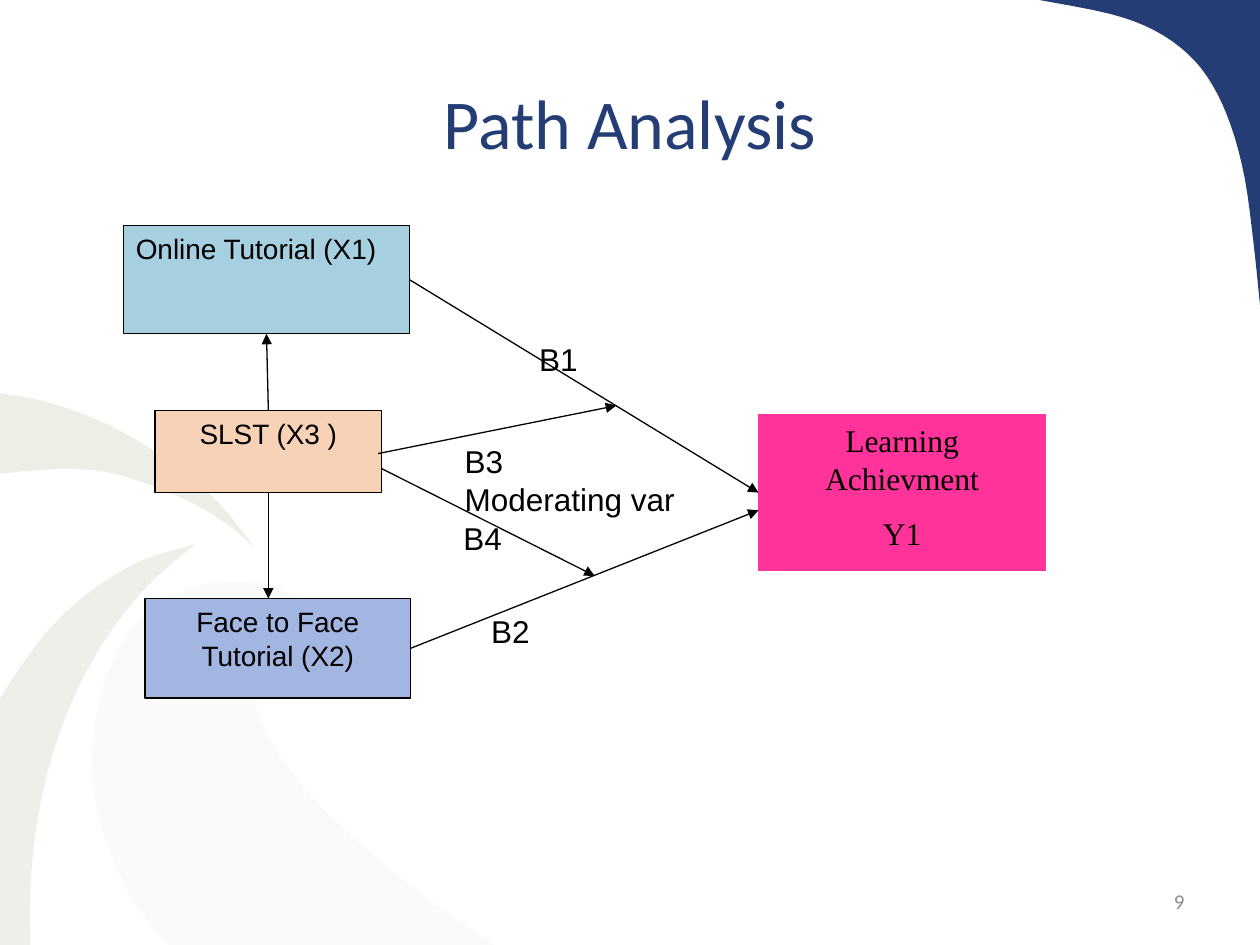
from dataclasses import dataclass
from typing import Optional

from lxml import etree
from pptx import Presentation
from pptx.dml.color import RGBColor
from pptx.enum.shapes import MSO_CONNECTOR, MSO_SHAPE
from pptx.enum.text import MSO_ANCHOR, PP_ALIGN
from pptx.oxml.ns import qn
from pptx.util import Inches, Pt

LEFT, CENTER, RIGHT = PP_ALIGN.LEFT, PP_ALIGN.CENTER, PP_ALIGN.RIGHT
TOP, MIDDLE = MSO_ANCHOR.TOP, MSO_ANCHOR.MIDDLE
RECTANGLE, PROCESS = MSO_SHAPE.RECTANGLE, MSO_SHAPE.FLOWCHART_PROCESS
STRAIGHT = MSO_CONNECTOR.STRAIGHT
SIDE_TOP, SIDE_LEFT, SIDE_BOTTOM, SIDE_RIGHT = range(4)
CURVE_STEPS = 4

COLORS = {
    "navy": "253D75", "pale_green": "EBEFE6", "green": "D7DFCE", "gray": "F2F2F2",
    "number": "8C8C8C", "black": "000000", "blue": "A6D0DF", "peach": "F8D2B6",
    "periwinkle": "A3B6E2", "pink": "FF3399",
}

Point = tuple[float, float]


@dataclass
class Swoosh:
    color: str
    edges: list[list[Point]]  # each edge is a smooth curve; edges meet at corners
    opacity: int = 100


@dataclass
class Box:
    name: str
    frame: tuple[float, float, float, float]
    fill: str
    line: str
    lines: list[str]
    size: int = 16
    font: str = "Arial"
    align: PP_ALIGN = CENTER
    space_after: int = 10
    preset: MSO_SHAPE = RECTANGLE


@dataclass
class Arrow:
    start: Point
    end: Point
    source: Optional[tuple[str, int]] = None
    target: Optional[tuple[str, int]] = None


@dataclass
class Label:
    frame: tuple[float, float, float, float]
    lines: list[str]
    size: int = 18
    font: str = "Arial"
    color: str = "black"
    align: PP_ALIGN = LEFT
    anchor: MSO_ANCHOR = TOP
    wrap: bool = False
    margin_top: float = 0.05


SWOOSHES = [
    Swoosh("navy", [
        [(8.25, 0), (10, 0)], [(10, 0), (10, 2.42)],
        [(10, 2.42), (9.95, 1.94), (9.88, 1.42), (9.77, 1), (9.62, 0.67), (9.43, 0.43),
         (9.16, 0.24), (8.81, 0.11), (8.25, 0)]]),
    Swoosh("pale_green", [
        [(0, 3.12), (0.37, 3.19), (0.79, 3.34), (1.16, 3.54), (1.48, 3.76), (1.78, 4.04),
         (2.02, 4.35)],
        [(2.02, 4.35), (1.83, 4.18), (1.54, 4), (1.22, 3.86), (0.86, 3.75), (0.49, 3.72),
         (0, 3.76)]]),
    Swoosh("green", [
        [(0, 5.54), (0.22, 5.21), (0.46, 4.92), (0.75, 4.67), (1.12, 4.45), (1.55, 4.32)],
        [(1.55, 4.32), (1.2, 4.62), (0.9, 4.98), (0.67, 5.36), (0.49, 5.77), (0.36, 6.2),
         (0.28, 6.63), (0.24, 7.07), (0.24, 7.5)],
        [(0.24, 7.5), (0, 7.5)]], 44),
    Swoosh("gray", [
        [(2.45, 4.79), (2.15, 4.65), (1.83, 4.61), (1.51, 4.67), (1.22, 4.83), (0.98, 5.09),
         (0.81, 5.47), (0.73, 5.97), (0.77, 6.43), (0.92, 6.88), (1.12, 7.24), (1.34, 7.5)],
        [(1.34, 7.5), (3.92, 7.5)],
        [(3.92, 7.5), (3.47, 7.19), (3.04, 6.85), (2.59, 6.45), (2.31, 6.12), (2.12, 5.83),
         (2.02, 5.55), (2.01, 5.29), (2.09, 5.09), (2.21, 4.96), (2.45, 4.79)]], 34),
]

BOXES = [
    Box("online", (0.98, 1.79, 2.27, 0.86), "blue", "black", ["Online Tutorial (X1)"],
        align=LEFT, space_after=8, preset=PROCESS),
    Box("slst", (1.23, 3.26, 1.8, 0.65), "peach", "black", ["SLST (X3 )"]),
    Box("face", (1.15, 4.75, 2.11, 0.79), "periwinkle", "black",
        ["Face to Face Tutorial (X2)"], space_after=8),
    Box("achievement", (6.02, 3.29, 2.28, 1.24), "pink", "pink",
        ["Learning Achievment", "Y1"], 18, "Times New Roman"),
]

ARROWS = [
    Arrow((3.25, 2.22), (6.02, 3.91), ("online", SIDE_RIGHT), ("achievement", SIDE_LEFT)),
    Arrow((3.26, 5.15), (6.02, 4.05), ("face", SIDE_RIGHT)),
    Arrow((3, 3.6), (4.89, 3.22)),
    Arrow((3.03, 3.72), (4.72, 4.57)),
    Arrow((2.13, 3.26), (2.12, 2.65), ("slst", SIDE_TOP), ("online", SIDE_BOTTOM)),
    Arrow((2.13, 3.91), (2.13, 4.75), ("slst", SIDE_BOTTOM)),
]

LABELS = [
    Label((0.5, 0.3, 9, 1.25), ["Path Analysis"], 40, "Calibri", "navy", CENTER, MIDDLE,
          True, 0.13),
    Label((7.17, 6.95, 2.33, 0.4), ["9"], 12, "Calibri", "number", RIGHT, MIDDLE, True),
    Label((4.18, 2.65, 0.58, 0.4), ["B1"]),
    Label((3.58, 4.07, 0.58, 0.4), ["B4"]),
    Label((3.59, 3.46, 1.96, 0.71), ["B3", "Moderating var"]),
    Label((3.8, 4.81, 0.58, 0.4), ["B2"]),
]


def rgb(name: str) -> RGBColor:
    return RGBColor.from_string(COLORS[name])


def smooth(points: list[Point]) -> list[Point]:
    """Return a Catmull-Rom curve through the points, without its first point."""
    if len(points) == 2:
        return points[1:]
    padded = [points[0], *points, points[-1]]
    curve = []
    for a, b, c, d in zip(padded, padded[1:], padded[2:], padded[3:]):
        for step in range(1, CURVE_STEPS + 1):
            t = step / CURVE_STEPS
            curve.append(tuple(
                (2 * q + (r - p) * t + (2 * p - 5 * q + 4 * r - s) * t ** 2
                 + (3 * q - p - 3 * r + s) * t ** 3) / 2
                for p, q, r, s in zip(a, b, c, d)))
    return curve


def draw_swoosh(slide, swoosh: Swoosh) -> None:
    start_x, start_y = swoosh.edges[0][0]
    builder = slide.shapes.build_freeform(Inches(start_x), Inches(start_y))
    outline = [point for edge in swoosh.edges for point in smooth(edge)]
    builder.add_line_segments([(Inches(x), Inches(y)) for x, y in outline], close=True)
    shape = builder.convert_to_shape()
    shape.shadow.inherit = False
    shape.fill.solid()
    shape.fill.fore_color.rgb = rgb(swoosh.color)
    shape.line.fill.background()
    if swoosh.opacity < 100:
        color = shape.fill._xPr.find(qn("a:solidFill"))[0]
        etree.SubElement(color, qn("a:alpha"), val=str(swoosh.opacity * 1000))


def write_lines(text_frame, item: Box | Label, color: str, space_after: int = 0) -> None:
    for index, text in enumerate(item.lines):
        paragraph = text_frame.add_paragraph() if index else text_frame.paragraphs[0]
        paragraph.text = text
        paragraph.alignment = item.align
        paragraph.space_after = Pt(space_after)
        paragraph.font.name = item.font
        paragraph.font.size = Pt(item.size)
        paragraph.font.color.rgb = rgb(color)


def draw_box(slide, box: Box):
    shape = slide.shapes.add_shape(box.preset, *map(Inches, box.frame))
    shape.shadow.inherit = False
    shape.fill.solid()
    shape.fill.fore_color.rgb = rgb(box.fill)
    shape.line.color.rgb = rgb(box.line)
    shape.line.width = Pt(0.75)
    shape.text_frame.word_wrap = True
    shape.text_frame.vertical_anchor = TOP
    write_lines(shape.text_frame, box, "black", box.space_after)
    return shape


def draw_arrow(slide, arrow: Arrow, shapes: dict) -> None:
    connector = slide.shapes.add_connector(STRAIGHT, *map(Inches, arrow.start + arrow.end))
    if arrow.source:
        connector.begin_connect(shapes[arrow.source[0]], arrow.source[1])
    if arrow.target:
        connector.end_connect(shapes[arrow.target[0]], arrow.target[1])
    connector.line.color.rgb = rgb("black")
    connector.line.width = Pt(0.75)
    etree.SubElement(connector.line._get_or_add_ln(), qn("a:tailEnd"), type="triangle")
    etree.SubElement(connector._element.spPr, qn("a:effectLst"))


def draw_label(slide, label: Label) -> None:
    text_frame = slide.shapes.add_textbox(*map(Inches, label.frame)).text_frame
    text_frame.word_wrap = label.wrap
    text_frame.vertical_anchor = label.anchor
    text_frame.margin_top = Inches(label.margin_top)
    write_lines(text_frame, label, label.color)


def main() -> None:
    presentation = Presentation()
    presentation.slide_width, presentation.slide_height = Inches(10), Inches(7.5)
    slide = presentation.slides.add_slide(presentation.slide_layouts[6])

    # Background curves
    for swoosh in SWOOSHES:
        draw_swoosh(slide, swoosh)
    # Path diagram
    shapes = {box.name: draw_box(slide, box) for box in BOXES}
    for arrow in ARROWS:
        draw_arrow(slide, arrow, shapes)
    # Title, slide number and path labels
    for label in LABELS:
        draw_label(slide, label)

    presentation.save("out.pptx")


if __name__ == "__main__":
    main()
